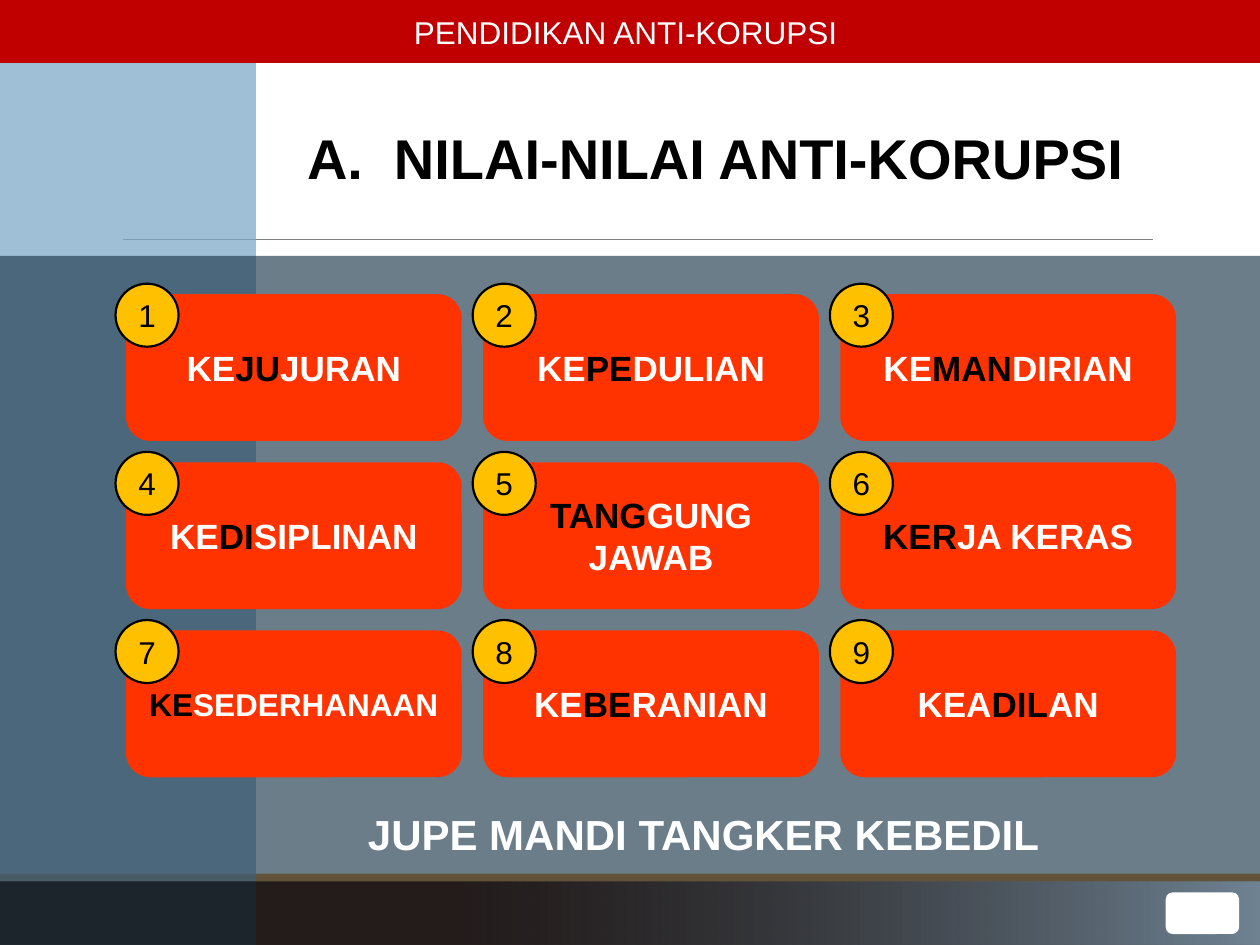
from lxml.etree import SubElement
from pptx import Presentation
from pptx.dml.color import RGBColor
from pptx.enum.shapes import MSO_CONNECTOR, MSO_SHAPE
from pptx.enum.text import MSO_ANCHOR, PP_ALIGN
from pptx.oxml.ns import qn
from pptx.util import Cm, Pt

FONT = "Arial"
BLACK = RGBColor(0x00, 0x00, 0x00)
WHITE = RGBColor(0xFF, 0xFF, 0xFF)
GRAY = RGBColor(0x80, 0x80, 0x80)
RED = RGBColor(0xC0, 0x00, 0x00)
CARD_RED = RGBColor(0xFF, 0x33, 0x00)
AMBER = RGBColor(0xFF, 0xC0, 0x00)
RUST = RGBColor(0xBD, 0x58, 0x2C)
ORANGE = RGBColor(0xE4, 0x83, 0x12)
LIGHT_BLUE = RGBColor(0x7E, 0xA9, 0xCA)
NAVY = RGBColor(0x20, 0x3A, 0x4E)
SLATE = RGBColor(0x70, 0x84, 0x94)

SLIDE_WIDTH, SLIDE_HEIGHT = 25.4, 19.05
BAR_HEIGHT = 1.27
FOOTER_TOP = SLIDE_HEIGHT - BAR_HEIGHT
COLUMNS = 3
GRID_LEFT, GRID_TOP = 2.54, 5.93
PITCH_X, PITCH_Y = 7.2, 3.39
CARD_WIDTH, CARD_HEIGHT = 6.77, 2.96
BADGE_SIZE, BADGE_OVERHANG = 1.27, 0.21

# Each value: text before the highlighted syllable, the syllable, text after, size
VALUES = [
    ("KE", "JU", "JURAN", 20),
    ("KE", "PE", "DULIAN", 20),
    ("KE", "MAN", "DIRIAN", 20),
    ("KE", "DI", "SIPLINAN", 20),
    ("", "TANG", "GUNG JAWAB", 20),
    ("", "KER", "JA KERAS", 20),
    ("", "KE", "SEDERHANAAN", 18),
    ("KE", "BE", "RANIAN", 20),
    ("KEA", "DIL", "AN", 20),
]


def set_opacity(color_element, percent):
    SubElement(color_element, qn("a:alpha"), val=str(percent * 1000))


def add_block(shapes, kind, left, top, width, height, color, opacity=100):
    """Add a filled preset shape without outline or shadow."""
    shape = shapes.add_shape(kind, Cm(left), Cm(top), Cm(width), Cm(height))
    shape.shadow.inherit = False
    shape.line.fill.background()
    shape.fill.solid()
    shape.fill.fore_color.rgb = color
    if opacity < 100:
        set_opacity(shape._element.spPr.find(".//" + qn("a:srgbClr")), opacity)
    return shape


def write_text(shape, parts, size, bold=False, align=PP_ALIGN.CENTER):
    """Write one paragraph from (text, color) parts."""
    frame = shape.text_frame
    frame.word_wrap = True
    frame.vertical_anchor = MSO_ANCHOR.MIDDLE
    paragraph = frame.paragraphs[0]
    paragraph.alignment = align
    paragraph.font.name = FONT
    paragraph.font.size = Pt(size)
    paragraph.font.bold = bold
    for text, color in parts:
        if text:
            run = paragraph.add_run()
            run.text = text
            run.font.color.rgb = color


def add_label(slide, left, top, width, height, text, color, size, align):
    box = slide.shapes.add_textbox(Cm(left), Cm(top), Cm(width), Cm(height))
    write_text(box, [(text, color)], size, True, align)


def add_rule(slide, left, right, top):
    rule = slide.shapes.add_connector(
        MSO_CONNECTOR.STRAIGHT, Cm(left), Cm(top), Cm(right), Cm(top))
    rule.line.color.rgb = GRAY
    rule.line.width = Pt(0.5)
    SubElement(rule._element.spPr, qn("a:effectLst"))


def add_background(slide):
    shapes, rect = slide.shapes, MSO_SHAPE.RECTANGLE
    add_block(shapes, rect, 0, FOOTER_TOP, SLIDE_WIDTH, BAR_HEIGHT, RUST)
    add_block(shapes, rect, 0, FOOTER_TOP - 0.17, SLIDE_WIDTH, 0.17, ORANGE)
    add_rule(slide, 2.48, 23.24, 4.83)
    add_block(shapes, rect, 0, 0, 5.16, SLIDE_HEIGHT, LIGHT_BLUE, 74)
    add_block(shapes, rect, 0, 5.16, SLIDE_WIDTH, SLIDE_HEIGHT - 5.16, NAVY, 66)


def add_header(slide):
    header = add_block(slide.shapes, MSO_SHAPE.RECTANGLE,
                       0, 0, SLIDE_WIDTH, BAR_HEIGHT, RED)
    header.text_frame.margin_right = Cm(0.42)
    write_text(header, [("PENDIDIKAN ANTI-KORUPSI", WHITE)], 18)


def add_footer(slide):
    footer = add_block(slide.shapes, MSO_SHAPE.RECTANGLE,
                       0, FOOTER_TOP, SLIDE_WIDTH, BAR_HEIGHT, BLACK)
    footer.fill.gradient()
    footer.fill.gradient_angle = 0
    start, end = footer.fill.gradient_stops
    start.position, start.color.rgb = 0.37, BLACK
    end.position, end.color.rgb = 1, SLATE
    set_opacity(footer._element.spPr.find(".//" + qn("a:srgbClr")), 58)
    add_block(slide.shapes, MSO_SHAPE.ROUNDED_RECTANGLE,
              23.5, 17.99, 1.48, 0.84, WHITE)


def add_value_card(slide, index, value):
    before, syllable, after, size = value
    row, column = divmod(index, COLUMNS)
    left = GRID_LEFT + column * PITCH_X
    top = GRID_TOP + row * PITCH_Y
    shapes = slide.shapes.add_group_shape().shapes
    card = add_block(shapes, MSO_SHAPE.ROUNDED_RECTANGLE,
                     left, top, CARD_WIDTH, CARD_HEIGHT, CARD_RED)
    write_text(card, [(before, WHITE), (syllable, BLACK), (after, WHITE)],
               size, True)
    badge = add_block(shapes, MSO_SHAPE.OVAL, left - BADGE_OVERHANG,
                      top - BADGE_OVERHANG, BADGE_SIZE, BADGE_SIZE, AMBER)
    badge.line.color.rgb = BLACK
    badge.line.width = Pt(1.25)
    write_text(badge, [(str(index + 1), BLACK)], 18)


def main():
    presentation = Presentation()
    presentation.slide_width = Cm(SLIDE_WIDTH)
    presentation.slide_height = Cm(SLIDE_HEIGHT)
    slide = presentation.slides.add_slide(presentation.slide_layouts[6])
    add_background(slide)
    add_label(slide, 5.94, 1.78, 18.06, 2.77, "A.  NILAI-NILAI ANTI-KORUPSI",
              BLACK, 32, PP_ALIGN.LEFT)
    add_header(slide)
    add_footer(slide)
    add_label(slide, 6.78, 16.08, 14.81, 1.47, "JUPE MANDI TANGKER KEBEDIL",
              WHITE, 24, PP_ALIGN.CENTER)
    for index, value in enumerate(VALUES):
        add_value_card(slide, index, value)
    presentation.save("out.pptx")


if __name__ == "__main__":
    main()
